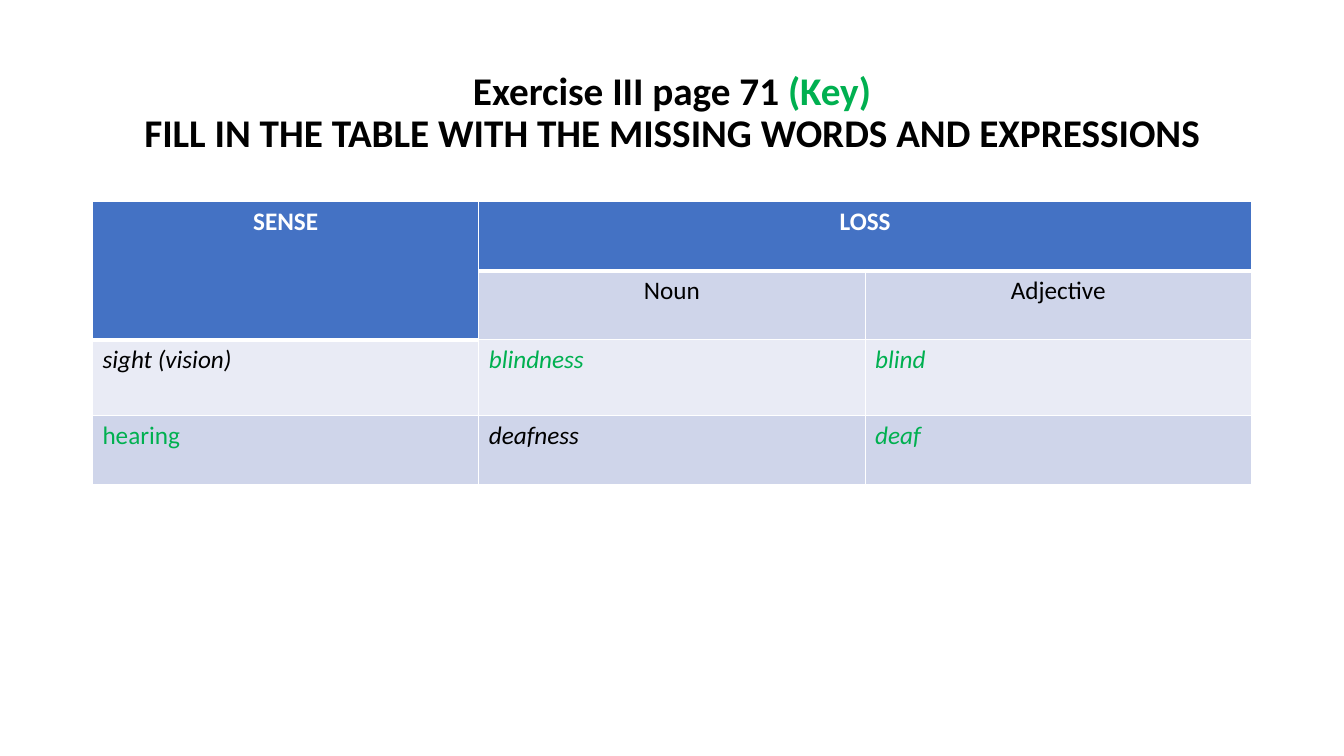
"""Build the answer-key slide on senses and their loss."""
from dataclasses import dataclass

from lxml import etree
from pptx import Presentation
from pptx.dml.color import RGBColor
from pptx.enum.text import MSO_ANCHOR, PP_ALIGN
from pptx.oxml.ns import qn
from pptx.util import Cm, Pt

CENTER = PP_ALIGN.CENTER
LEFT = PP_ALIGN.LEFT
MIDDLE = MSO_ANCHOR.MIDDLE
TITLE_ONLY = 5


@dataclass(frozen=True)
class Theme:
    font: str = "Calibri"
    title_size: int = 28
    table_size: int = 18
    ink: str = "000000"
    answer: str = "00B050"
    white: str = "FFFFFF"
    header: str = "4472C4"
    band_dark: str = "CFD5EA"
    band_light: str = "E9EBF5"
    rule: float = 1
    header_rule: float = 3


THEME = Theme()
MARGIN = Cm(2.33)
CONTENT_WIDTH = Cm(29.21)
ROW_HEIGHTS = [Cm(1.74), Cm(1.74), Cm(1.91), Cm(1.74)]
COLUMNS = 3
HEADER_CELLS = {(0, 0), (0, 1), (0, 2), (1, 0)}
BANDS = [THEME.header, THEME.band_dark, THEME.band_light, THEME.band_dark]

HEADING = dict(color=THEME.white, bold=True, align=CENTER)
SUBHEADING = dict(align=CENTER)
GIVEN = dict(italic=True)
ANSWER = dict(color=THEME.answer, italic=True)
ENTRIES = {
    (0, 0): ("SENSE", HEADING),
    (0, 1): ("LOSS", HEADING),
    (1, 1): ("Noun", SUBHEADING),
    (1, 2): ("Adjective", SUBHEADING),
    (2, 0): ("sight (vision)", GIVEN),
    (2, 1): ("blindness", ANSWER),
    (2, 2): ("blind", ANSWER),
    (3, 0): ("hearing", dict(color=THEME.answer)),
    (3, 1): ("deafness", GIVEN),
    (3, 2): ("deaf", ANSWER),
}


def write(paragraph, text, size=THEME.table_size, color=THEME.ink,
          bold=False, italic=False, align=LEFT):
    """Append a formatted run to a paragraph."""
    paragraph.alignment = align
    run = paragraph.add_run()
    run.text = text
    font = run.font
    font.name, font.size = THEME.font, Pt(size)
    font.bold, font.italic = bold, italic
    font.color.rgb = RGBColor.from_string(color)


def add_border(cell, side, width):
    """Draw a white line on one side of a cell."""
    properties = cell._tc.get_or_add_tcPr()
    line = etree.SubElement(properties, qn(f"a:ln{side}"), w=str(Pt(width)))
    fill = etree.SubElement(line, qn("a:solidFill"))
    etree.SubElement(fill, qn("a:srgbClr"), val=THEME.white)


def format_cell(cell, row, column):
    """Give a cell its borders and fill by its place in the table."""
    is_header = (row, column) in HEADER_CELLS
    below_header = (row - 1, column) in HEADER_CELLS
    widths = {
        "L": THEME.rule,
        "R": THEME.rule,
        "T": THEME.header_rule if below_header else THEME.rule,
        "B": THEME.header_rule if is_header else THEME.rule,
    }
    for side, width in widths.items():
        add_border(cell, side, width)
    cell.fill.solid()
    cell.fill.fore_color.rgb = RGBColor.from_string(
        THEME.header if is_header else BANDS[row])


def add_title(slide):
    """Place the two-line title."""
    title = slide.shapes.title
    title.left, title.top = MARGIN, Cm(1.02)
    title.width, title.height = CONTENT_WIDTH, Cm(3.68)
    title.text_frame.vertical_anchor = MIDDLE
    heading = title.text_frame.paragraphs[0]
    heading.line_spacing = 0.9
    style = dict(size=THEME.title_size, bold=True, align=CENTER)
    write(heading, "Exercise III page 71 ", **style)
    write(heading, "(Key)", color=THEME.answer, **style)
    heading.add_line_break()
    write(heading, "FILL IN THE TABLE WITH THE MISSING WORDS AND EXPRESSIONS", **style)


def add_sense_table(slide):
    """Build the table of senses, nouns and adjectives."""
    senses = slide.shapes.add_table(
        len(ROW_HEIGHTS), COLUMNS, MARGIN, Cm(5.08),
        CONTENT_WIDTH, sum(ROW_HEIGHTS)).table
    for table_row, height in zip(senses.rows, ROW_HEIGHTS):
        table_row.height = height
    for row in range(len(ROW_HEIGHTS)):
        for column in range(COLUMNS):
            format_cell(senses.cell(row, column), row, column)
    senses.cell(0, 0).merge(senses.cell(1, 0))
    senses.cell(0, 1).merge(senses.cell(0, 2))
    for (row, column), (text, style) in ENTRIES.items():
        write(senses.cell(row, column).text_frame.paragraphs[0], text, **style)


def main():
    """Create and save the slide."""
    deck = Presentation()
    deck.slide_width, deck.slide_height = Cm(33.87), Cm(19.05)
    slide = deck.slides.add_slide(deck.slide_layouts[TITLE_ONLY])
    add_title(slide)
    add_sense_table(slide)
    deck.save("out.pptx")


if __name__ == "__main__":
    main()
